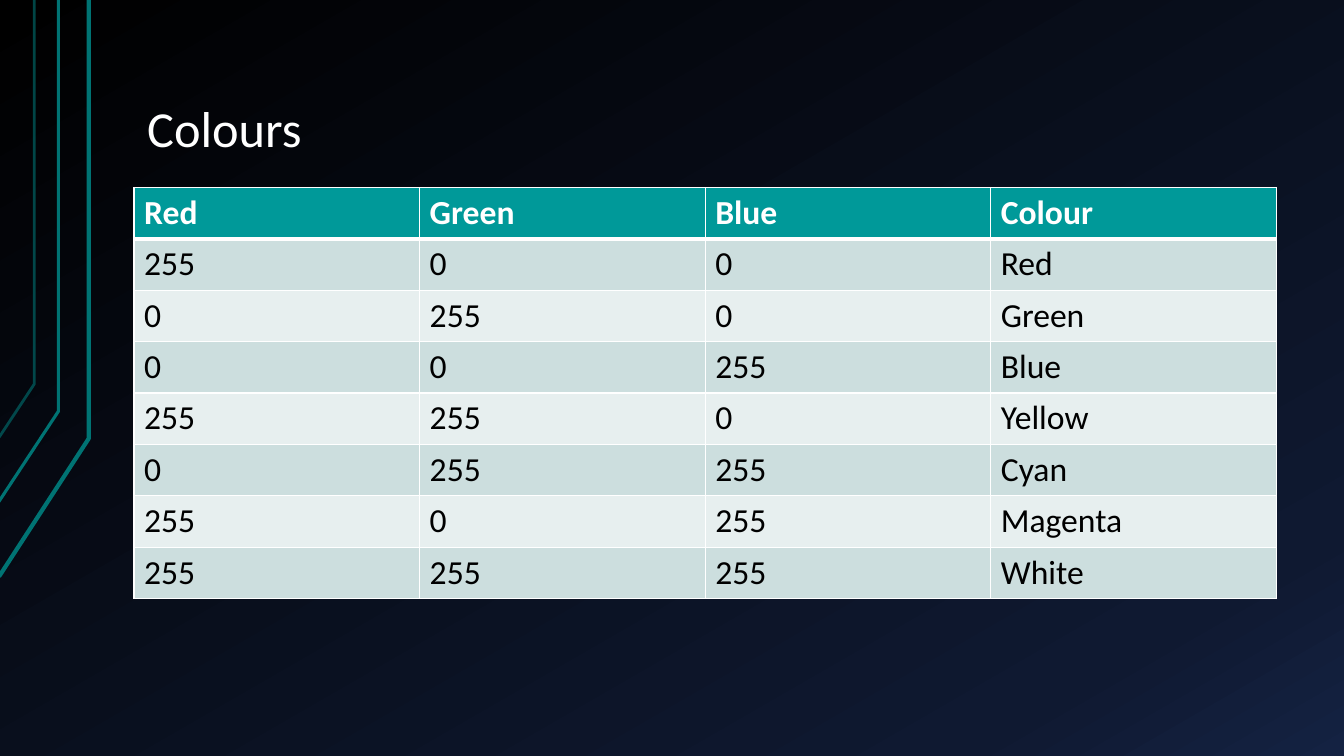
"""Build a slide with a table of RGB values for common colours."""
from copy import deepcopy
from dataclasses import dataclass

from lxml import etree
from pptx import Presentation
from pptx.dml.color import RGBColor
from pptx.enum import text
from pptx.oxml import ns
from pptx.util import Inches, Pt


@dataclass(frozen=True)
class Theme:
    """Hold the colours and type sizes of the slide."""
    font: str = "Calibri"
    title_size: float = 36
    table_size: float = 24
    white: str = "FFFFFF"
    black: str = "000000"
    header: str = "009999"
    bands: tuple = ("CCDEDE", "E7EFEF")
    accent: str = "007373"
    background: tuple = ((0, "000000"), (0.85, "0F1931"), (1, "142242"))


THEME = Theme()

ACCENT_LINES = [
    ([(-0.01, 5.72), (0.88, 4.35), (0.88, 0)], 3, 100),
    ([(-0.02, 4.99), (0.58, 4.08), (0.58, 0)], 2.25, 100),
    ([(-0.01, 4.34), (0.34, 3.81), (0.34, 0)], 2, 60),
]

COLOUR_ROWS = [
    ("Red", "Green", "Blue", "Colour"),
    (255, 0, 0, "Red"),
    (0, 255, 0, "Green"),
    (0, 0, 255, "Blue"),
    (255, 255, 0, "Yellow"),
    (0, 255, 255, "Cyan"),
    (255, 0, 255, "Magenta"),
    (255, 255, 255, "White"),
]


def rgb(value):
    """Return the colour for a hex value."""
    return RGBColor.from_string(value)


def style_font(paragraph, size, colour, bold=False):
    """Set the font of a paragraph."""
    font = paragraph.font
    font.name, font.size, font.bold = THEME.font, Pt(size), bold
    font.color.rgb = rgb(colour)


def paint_background(slide):
    """Fill the slide with a diagonal gradient."""
    fill = slide.background.fill
    fill.gradient()
    fill.gradient_angle = 300
    stop_list = slide.element.find(".//" + ns.qn("a:gsLst"))
    stop_list.append(deepcopy(stop_list[0]))
    for stop, (position, colour) in zip(fill.gradient_stops, THEME.background):
        stop.position = position
        stop.color.rgb = rgb(colour)


def add_accent_line(slide, points, width, opacity):
    """Draw one bent line at the left edge."""
    start, *rest = [(Inches(x), Inches(y)) for x, y in points]
    builder = slide.shapes.build_freeform(*start)
    builder.add_line_segments(rest, close=False)
    shape = builder.convert_to_shape()
    shape.shadow.inherit = False
    shape.fill.background()
    shape.line.color.rgb = rgb(THEME.accent)
    shape.line.width = Pt(width)
    if opacity < 100:
        colour = shape.line._ln.find(".//" + ns.qn("a:srgbClr"))
        etree.SubElement(colour, ns.qn("a:alpha"), val=str(opacity * 1000))


def set_title(slide, wording):
    """Place and format the title."""
    title = slide.shapes.title
    title.left, title.top = Inches(1.33), Inches(0.3)
    title.width, title.height = Inches(11.33), Inches(1.34)
    frame = title.text_frame
    frame.text = wording
    frame.vertical_anchor = text.MSO_ANCHOR.BOTTOM
    frame.margin_left = frame.margin_right = Inches(0.13)
    frame.margin_top = frame.margin_bottom = Inches(0.07)
    paragraph = frame.paragraphs[0]
    paragraph.alignment = text.PP_ALIGN.LEFT
    paragraph.line_spacing = 0.9
    style_font(paragraph, THEME.title_size, THEME.white)


def set_borders(cell, widths):
    """Draw white borders, with a width in points for each side."""
    properties = cell._tc.get_or_add_tcPr()
    for index, (side, width) in enumerate(widths.items()):
        line = etree.Element(ns.qn(f"a:ln{side}"), w=str(Pt(width)))
        fill = etree.SubElement(line, ns.qn("a:solidFill"))
        etree.SubElement(fill, ns.qn("a:srgbClr"), val=THEME.white)
        properties.insert(index, line)


def add_colour_table(slide, rows):
    """Add the table with a header row and banded body rows."""
    row_height = 0.51
    table = slide.shapes.add_table(
        len(rows), len(rows[0]), Inches(1.33), Inches(1.86),
        Inches(11.33), Inches(row_height * len(rows))).table
    for row_index, values in enumerate(rows):
        is_header = row_index == 0
        fill = THEME.header if is_header else THEME.bands[(row_index - 1) % 2]
        colour = THEME.white if is_header else THEME.black
        widths = {"L": 1, "R": 1, "T": 3 if row_index == 1 else 1,
                  "B": 3 if is_header else 1}
        for column_index, value in enumerate(values):
            cell = table.cell(row_index, column_index)
            cell.text = str(value)
            cell.fill.solid()
            cell.fill.fore_color.rgb = rgb(fill)
            style_font(cell.text_frame.paragraphs[0], THEME.table_size,
                       colour, is_header)
            set_borders(cell, widths)


def main():
    """Build and save the presentation."""
    presentation = Presentation()
    presentation.slide_width = Inches(13.33)
    presentation.slide_height = Inches(7.5)
    slide = presentation.slides.add_slide(
        presentation.slide_layouts.get_by_name("Title Only"))
    paint_background(slide)
    for points, width, opacity in ACCENT_LINES:
        add_accent_line(slide, points, width, opacity)
    set_title(slide, "Colours")
    add_colour_table(slide, COLOUR_ROWS)
    presentation.save("out.pptx")


if __name__ == "__main__":
    main()
